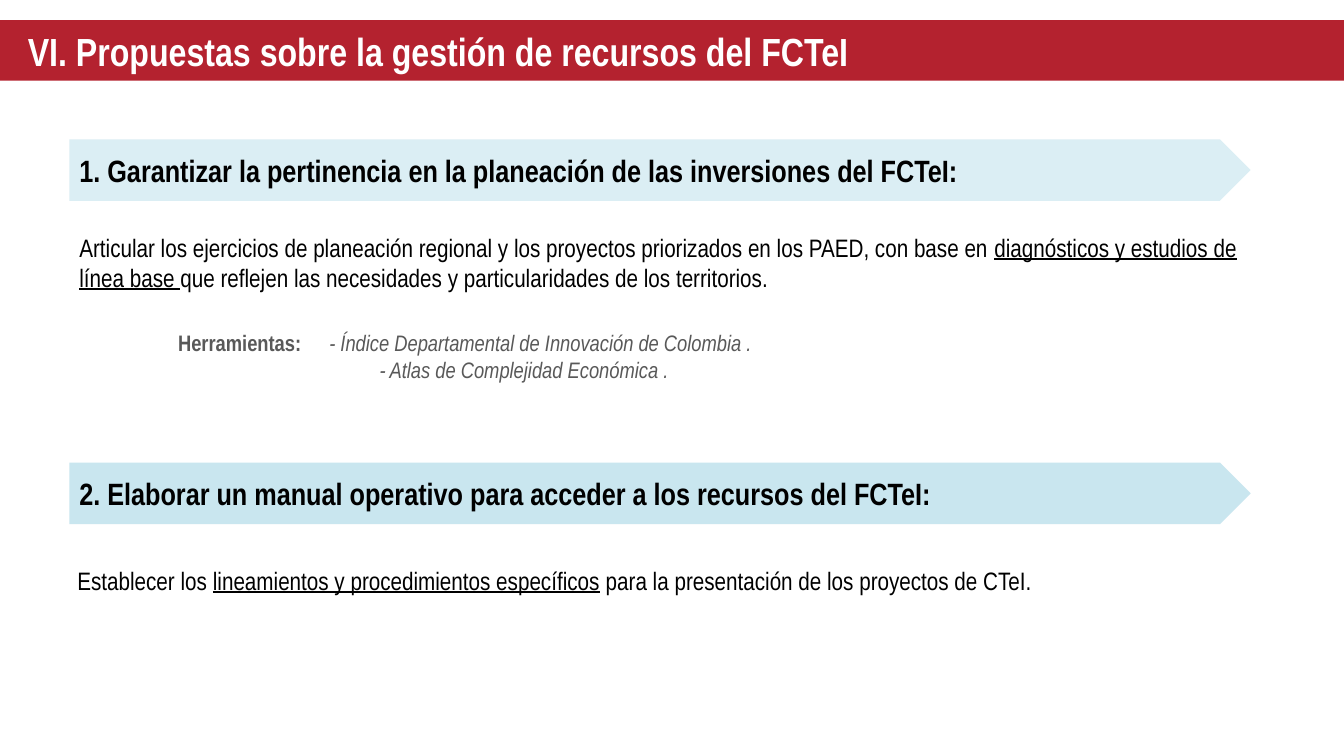
from dataclasses import dataclass

from pptx import Presentation
from pptx.dml.color import RGBColor as RGB
from pptx.enum.shapes import MSO_SHAPE as Shape
from pptx.enum.text import MSO_ANCHOR as Anchor, MSO_AUTO_SIZE as AutoSize, PP_ALIGN as Align
from pptx.util import Cm, Pt


@dataclass(frozen=True)
class Theme:
    font: str = "Arial Narrow"
    red: RGB = RGB(0xB4, 0x22, 0x2F)
    pale_blue: RGB = RGB(0xDB, 0xEE, 0xF4)
    blue: RGB = RGB(0xC9, 0xE6, 0xEF)
    white: RGB = RGB(0xFF, 0xFF, 0xFF)
    black: RGB = RGB(0x00, 0x00, 0x00)
    grey: RGB = RGB(0x59, 0x59, 0x59)
    title_size: Pt = Pt(28)
    heading_size: Pt = Pt(22)
    body_size: Pt = Pt(18)
    tool_size: Pt = Pt(16)


THEME = Theme()
SLIDE_WIDTH = Cm(33.87)
LEFT = Cm(1.75)
WIDTH = Cm(29.77)


def add_run(p, text, size, color, bold=False, italic=False, underline=False):
    r = p.add_run()
    r.text = text
    r.font.name = THEME.font
    r.font.size = size
    r.font.color.rgb = color
    r.font.bold = bold
    r.font.italic = italic
    r.font.underline = underline


def place(sp, left, top, width, height):
    sp.left, sp.top, sp.width, sp.height = left, top, width, height


def add_title(s, text):
    sp = s.shapes.title
    place(sp, 0, Cm(0.51), SLIDE_WIDTH, Cm(1.52))
    sp.fill.solid()
    sp.fill.fore_color.rgb = THEME.red
    tf = sp.text_frame
    tf.auto_size = AutoSize.NONE
    tf.vertical_anchor = Anchor.MIDDLE
    tf.margin_left = Cm(0.7)
    p = tf.paragraphs[0]
    p.alignment = Align.LEFT
    add_run(p, text, THEME.title_size, THEME.white, bold=True)


def add_heading(s, top, fill, text):
    sp = s.shapes.add_shape(Shape.PENTAGON, LEFT, top, WIDTH, Cm(1.55))
    sp.shadow.inherit = False
    sp.fill.solid()
    sp.fill.fore_color.rgb = fill
    sp.line.fill.background()
    tf = sp.text_frame
    tf.word_wrap = True
    tf.vertical_anchor = Anchor.MIDDLE
    p = tf.paragraphs[0]
    p.alignment = Align.LEFT
    add_run(p, text, THEME.heading_size, THEME.black, bold=True)


def add_text_frame(s, left, top, width, height):
    tf = s.shapes.add_textbox(left, top, width, height).text_frame
    tf.word_wrap = True
    return tf


def add_proposal(s, left, top, before, underlined, after):
    p = add_text_frame(s, left, top, WIDTH, Cm(1.8)).paragraphs[0]
    for text in (before, underlined, after):
        add_run(p, text, THEME.body_size, THEME.black, underline=text == underlined)


def add_tools(s, label, tools):
    tf = add_text_frame(s, Cm(4.24), Cm(8.18), Cm(17.25), Cm(1.63))
    p = tf.paragraphs[0]
    add_run(p, f"{label}\t", THEME.tool_size, THEME.grey, bold=True)
    for i, tool in enumerate(tools):
        if i:
            p = tf.add_paragraph()
            p._p.get_or_add_pPr().set("marL", str(Cm(5.08)))
        add_run(p, f"- {tool}", THEME.tool_size, THEME.grey, italic=True)


def main():
    prs = Presentation()
    prs.slide_width = SLIDE_WIDTH
    prs.slide_height = Cm(19.05)
    s = prs.slides.add_slide(prs.slide_layouts[5])

    add_title(s, "VI. Propuestas sobre la gestión de recursos del FCTeI")
    add_heading(s, Cm(3.51), THEME.pale_blue,
                "1. Garantizar la pertinencia en la planeación de las inversiones del FCTeI:")
    add_proposal(s, LEFT, Cm(5.72),
                 "Articular los ejercicios de planeación regional y los proyectos "
                 "priorizados en los PAED, con base en ",
                 "diagnósticos y estudios de línea base ",
                 "que reflejen las necesidades y particularidades de los territorios.")
    add_tools(s, "Herramientas:", (
        "Índice Departamental de Innovación de Colombia .",
        "Atlas de Complejidad Económica .",
    ))
    add_heading(s, Cm(11.66), THEME.blue,
                "2. Elaborar un manual operativo para acceder a los recursos del FCTeI:")
    add_proposal(s, Cm(1.7), Cm(14.12),
                 "Establecer los ",
                 "lineamientos y procedimientos específicos",
                 " para la presentación de los proyectos de CTeI.")

    prs.save("out.pptx")


if __name__ == "__main__":
    main()
